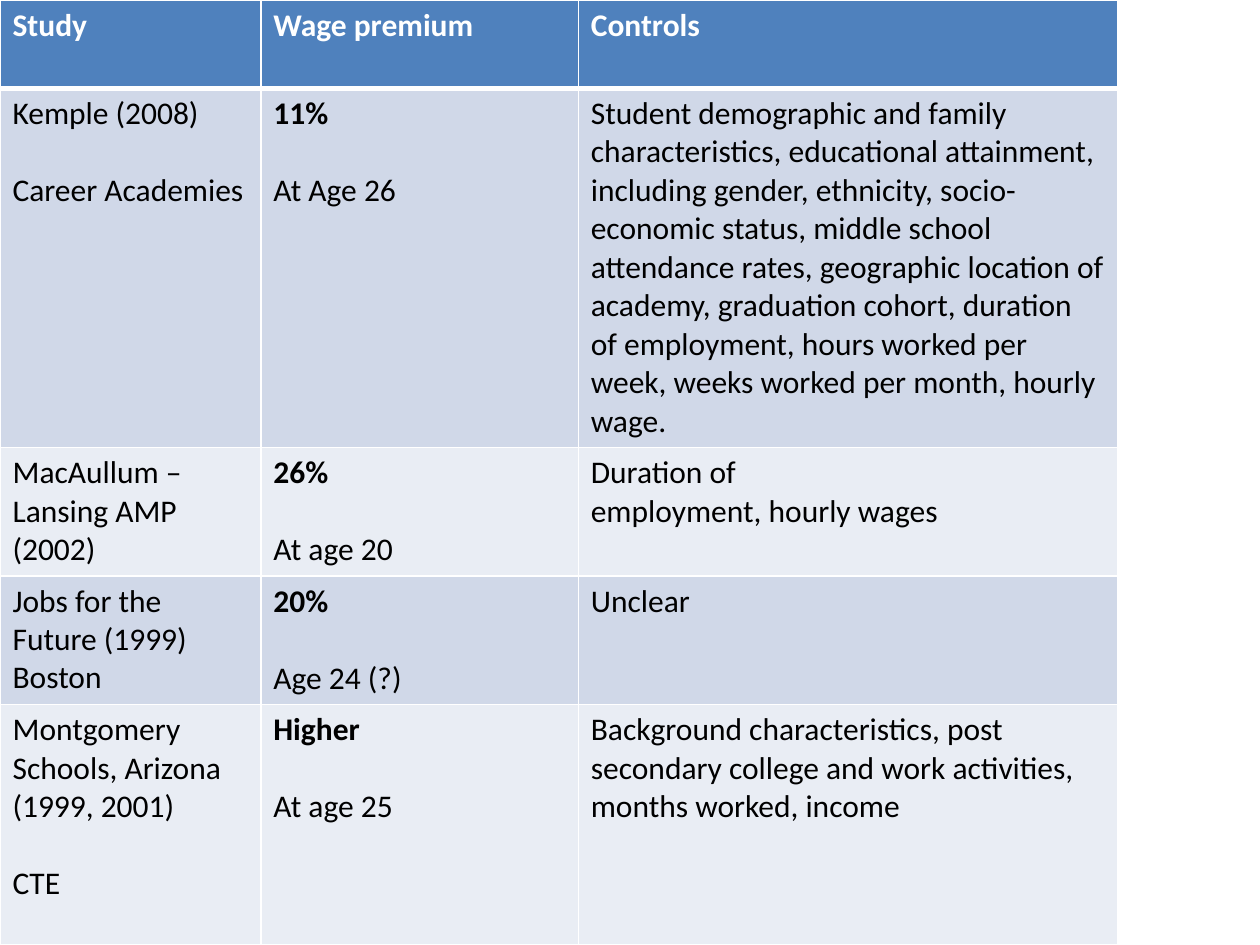
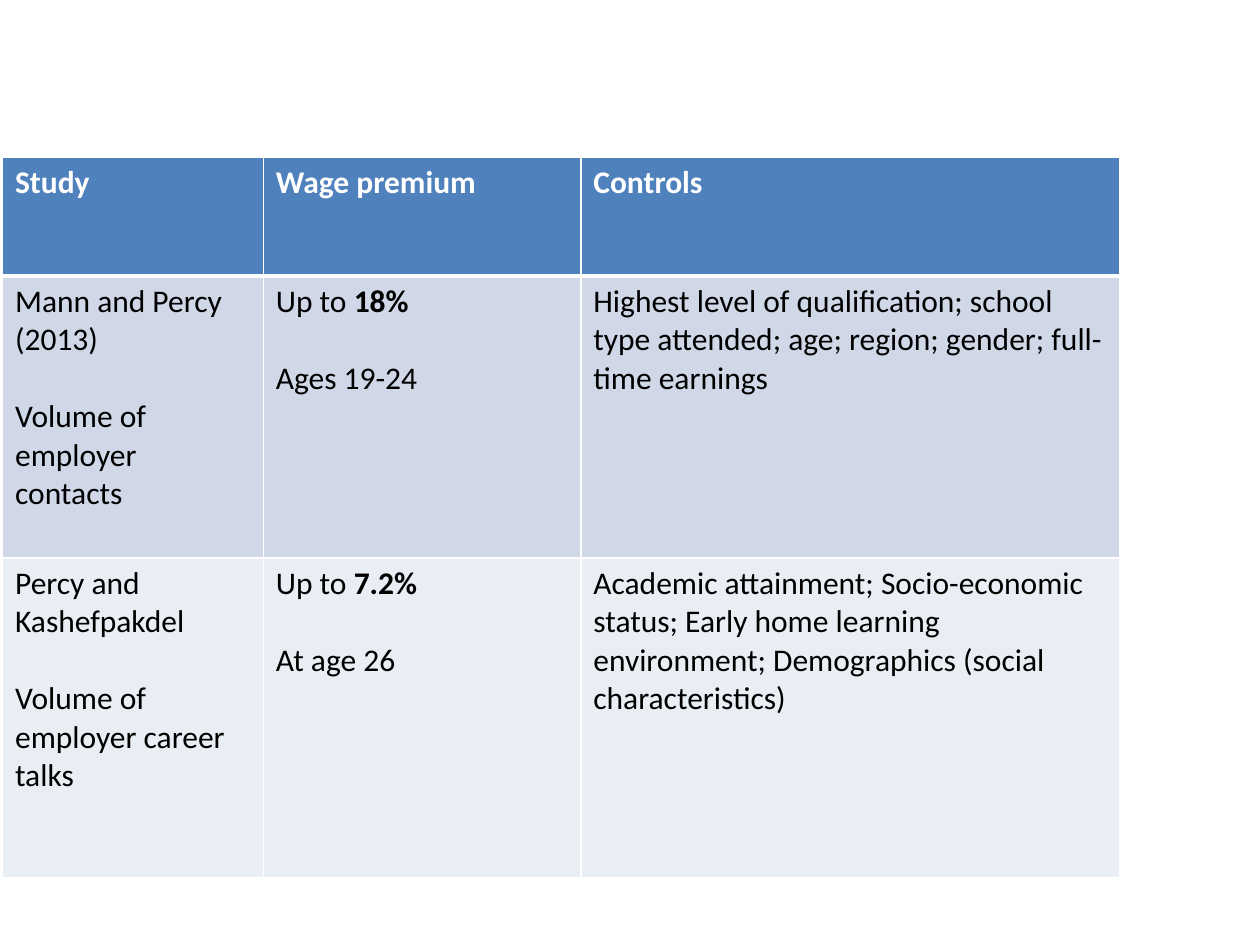
from dataclasses import dataclass

from lxml import etree
from pptx import Presentation
from pptx.dml.color import RGBColor
from pptx.oxml.ns import qn
from pptx.util import Inches, Pt

# A cell lists text blocks set apart by a gap; asterisks enclose bold text,
# and a line feed starts a new paragraph without a gap.
HEADINGS = [["*Study*"], ["*Wage premium*"], ["*Controls*"]]

SLIDES = [
    {
        "left": 0, "top": 0,
        "row_heights": [0.7, 2.85, 1.02, 1.02, 1.91],
        "studies": [
            [["Kemple (2008)", "Career Academies"],
             ["*11%*", "At Age 26"],
             ["Student demographic and family characteristics, educational "
              "attainment, including gender, ethnicity, socio-economic status, "
              "middle school attendance rates, geographic location of academy, "
              "graduation cohort, duration of employment, hours worked per "
              "week, weeks worked per month, hourly wage."]],
            [["MacAullum – Lansing AMP (2002)"],
             ["*26%*", "At age 20"],
             ["Duration of\nemployment, hourly wages"]],
            [["Jobs for the Future (1999) Boston"],
             ["*20%*", "Age 24 (?)"],
             ["Unclear"]],
            [["Montgomery Schools, Arizona (1999, 2001)", "CTE"],
             ["*Higher*", "At age 25"],
             ["Background characteristics, post secondary college and work "
              "activities, months worked, income"]],
        ],
    },
    {
        "left": 0.02, "top": 1.25,
        "row_heights": [0.94, 2.24, 2.54],
        "studies": [
            [["Mann and Percy (2013)", "Volume of employer contacts"],
             ["Up to *18%*", "Ages 19-24"],
             ["Highest level of qualification; school type attended; age; "
              "region; gender; full-time earnings"]],
            [["Percy and Kashefpakdel", "Volume of employer career talks"],
             ["Up to *7.2%*", "At age 26"],
             ["Academic attainment; Socio-economic status; Early home learning "
              "environment; Demographics (social characteristics)"]],
        ],
    },
]

COLUMN_WIDTHS = [2.07, 2.52, 4.28]


@dataclass(frozen=True)
class Theme:
    font: str = "Calibri"
    text_size: int = 18
    block_gap: int = 22
    header_fill: str = "4F81BD"
    header_text: str = "FFFFFF"
    body_text: str = "000000"
    bands: tuple = ("D0D8E8", "E9EDF4")
    border: str = "FFFFFF"
    thin_border: int = 1
    header_rule: int = 3


THEME = Theme()


def write_cell(cell, blocks, color):
    paragraphs = [(line, block_index > 0 and line_index == 0)
                  for block_index, block in enumerate(blocks)
                  for line_index, line in enumerate(block.split("\n"))]
    frame = cell.text_frame
    for index, (line, has_gap) in enumerate(paragraphs):
        paragraph = frame.add_paragraph() if index else frame.paragraphs[0]
        if has_gap:
            paragraph.space_before = Pt(THEME.block_gap)
        for part_index, part in enumerate(line.split("*")):
            if part:
                run = paragraph.add_run()
                run.text = part
                run.font.name = THEME.font
                run.font.size = Pt(THEME.text_size)
                run.font.bold = part_index % 2 == 1
                run.font.color.rgb = RGBColor.from_string(color)


def fill_cell(cell, color):
    cell.fill.solid()
    cell.fill.fore_color.rgb = RGBColor.from_string(color)


def border_cell(cell, top, bottom):
    """Put the four border lines ahead of the fill, as the schema requires."""
    properties = cell._tc.get_or_add_tcPr()
    thin = THEME.thin_border
    sides = [("a:lnL", thin), ("a:lnR", thin), ("a:lnT", top), ("a:lnB", bottom)]
    for position, (tag, width) in enumerate(sides):
        line = etree.Element(qn(tag), w=str(Pt(width)))
        fill = etree.SubElement(line, qn("a:solidFill"))
        etree.SubElement(fill, qn("a:srgbClr"), val=THEME.border)
        properties.insert(position, line)


def add_study_table(slide, content):
    rows = [HEADINGS] + content["studies"]
    heights = content["row_heights"]
    table = slide.shapes.add_table(
        len(rows), len(COLUMN_WIDTHS),
        Inches(content["left"]), Inches(content["top"]),
        Inches(sum(COLUMN_WIDTHS)), Inches(sum(heights))).table
    table.horz_banding = False
    for column, width in zip(table.columns, COLUMN_WIDTHS):
        column.width = Inches(width)
    for row, height in zip(table.rows, heights):
        row.height = Inches(height)

    for row_index, row in enumerate(rows):
        is_header = row_index == 0
        fill = THEME.header_fill if is_header else THEME.bands[(row_index - 1) % 2]
        color = THEME.header_text if is_header else THEME.body_text
        top = THEME.header_rule if row_index == 1 else THEME.thin_border
        bottom = THEME.header_rule if is_header else THEME.thin_border
        for column_index, blocks in enumerate(row):
            cell = table.cell(row_index, column_index)
            write_cell(cell, blocks, color)
            fill_cell(cell, fill)
            border_cell(cell, top, bottom)


def main():
    presentation = Presentation()
    presentation.slide_width = Inches(10)
    presentation.slide_height = Inches(7.5)
    blank_layout = presentation.slide_layouts[6]
    for content in SLIDES:
        add_study_table(presentation.slides.add_slide(blank_layout), content)
    presentation.save("out.pptx")


if __name__ == "__main__":
    main()
